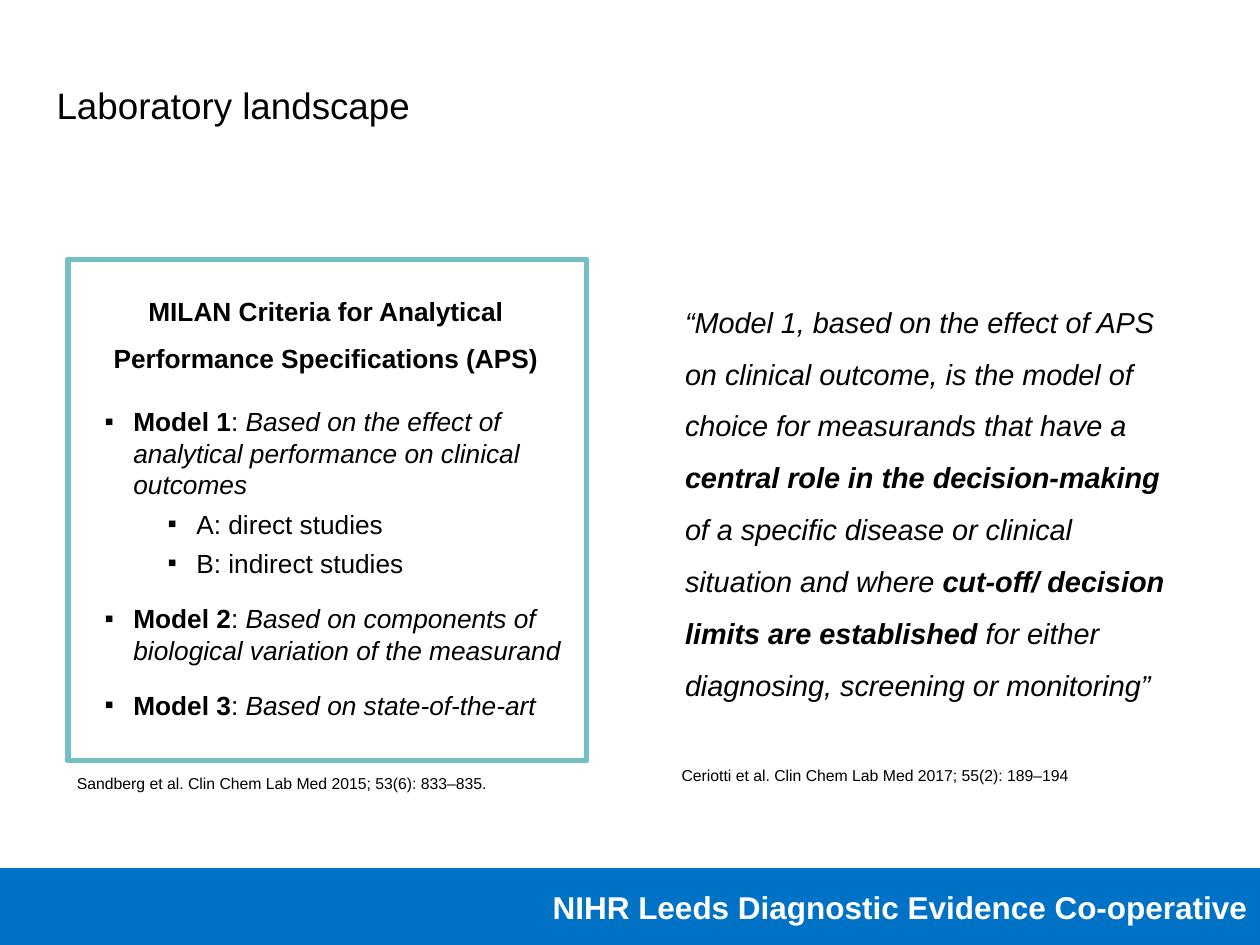
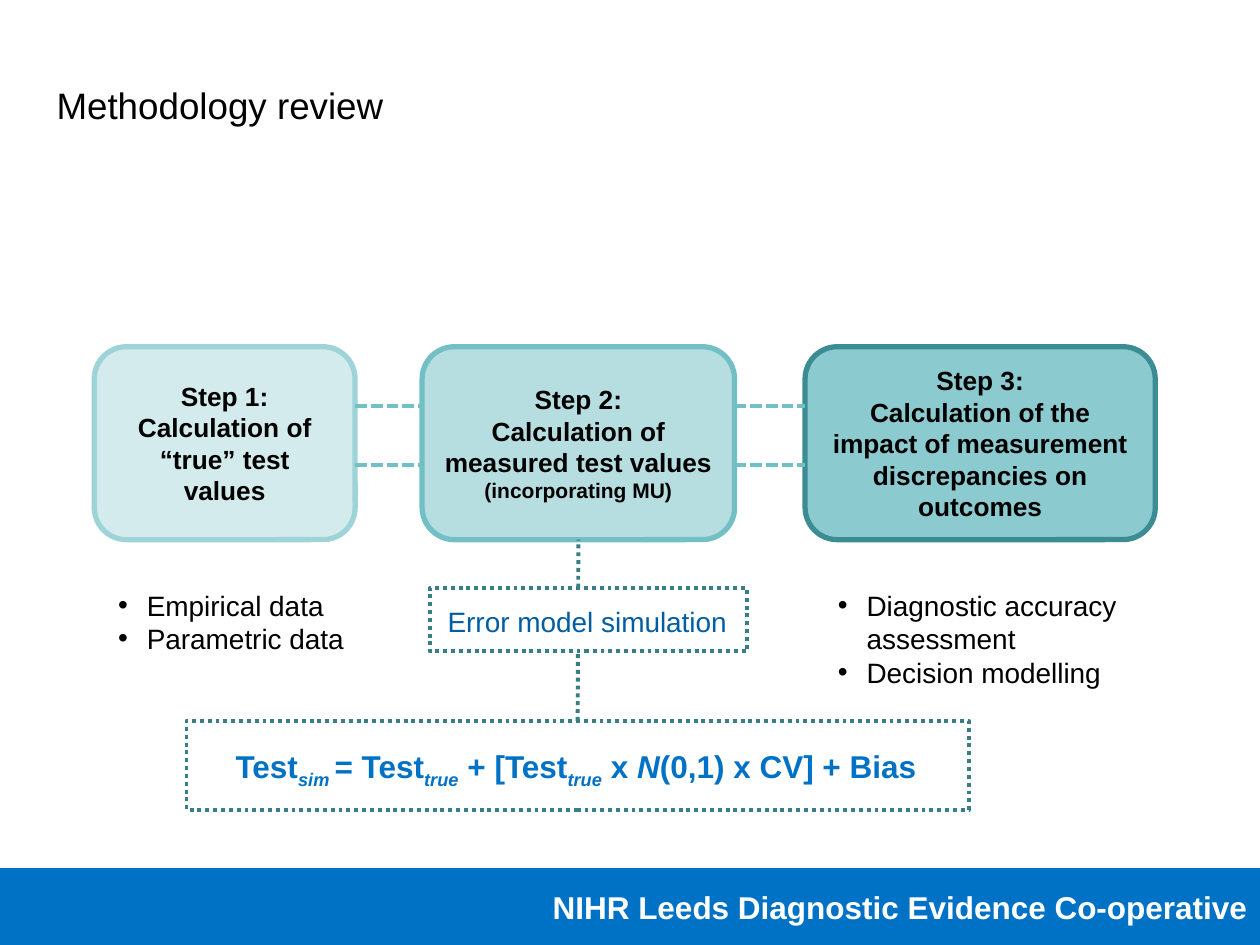
"""Build two slides on laboratory models and a methodology review."""
from lxml import etree
from pptx import Presentation
from pptx.dml.color import RGBColor
from pptx.enum.dml import MSO_LINE
from pptx.enum.shapes import MSO_CONNECTOR, MSO_SHAPE
from pptx.enum.text import MSO_ANCHOR, PP_ALIGN
from pptx.oxml.ns import qn
from pptx.util import Cm, Pt

RECT, ROUND = MSO_SHAPE.RECTANGLE, MSO_SHAPE.ROUNDED_RECTANGLE
DASH, DOT = MSO_LINE.SQUARE_DOT, MSO_LINE.ROUND_DOT
LINE = MSO_CONNECTOR.STRAIGHT
TOP, MID = MSO_ANCHOR.TOP, MSO_ANCHOR.MIDDLE
LEFT, CENTER, RIGHT = PP_ALIGN.LEFT, PP_ALIGN.CENTER, PP_ALIGN.RIGHT

FONT = "Arial"
COLORS = {
    "black": "000000", "white": "FFFFFF", "blue": "0072C6", "navy": "005DA2",
    "teal": "72BFC5", "dark": "377F85",
    "fill1": "D3EBED", "edge1": "9ED3D7",
    "fill2": "B6DDE0", "edge2": "72BFC5",
    "fill3": "8BCACF", "edge3": "3C8C93",
}

WIDE, TALL = 25.4, 19.05
BAND = (0, 17.53, WIDE, 1.5)
HEAD = (0.89, 1.3, 17.15, 1.63)
FOOT = "NIHR Leeds Diagnostic Evidence Co-operative"

MAIN = {"mark": "▪", "left": 1.27, "after": 13.5}
SUB = {"mark": "▪", "left": 2.54, "after": 4.5}
DOTS = {"mark": "•", "left": 0.58}

MILAN = [
    ([("MILAN Criteria for Analytical Performance Specifications (APS)", "b")],
     {"align": CENTER, "left": 0.36, "space": 1.5, "after": 18}),
    ([("Model 1", "b"), (": ", ""),
      ("Based on the effect of analytical performance on clinical outcomes", "i")],
     {**MAIN, "after": 4.5}),
    ([("A: direct studies", "")], SUB),
    ([("B: indirect studies", "")], {**SUB, "after": 13.5}),
    ([("Model 2", "b"), (": ", ""),
      ("Based on components of biological variation of the measurand", "i")], MAIN),
    ([("Model 3", "b"), (": ", ""), ("Based on state-of-the-art", "i")], MAIN),
]
QUOTE = [([
    ("“Model 1, based on the effect of APS on clinical outcome, is the model of "
     "choice for measurands that have a ", "i"),
    ("central role in the decision-making ", "bi"),
    ("of a specific disease or clinical situation and where ", "i"),
    ("cut-off/ decision limits are established ", "bi"),
    ("for either diagnosing, screening or monitoring”", "i"),
], {"space": 1.5})]
CITES = [
    ((1.3, 15.47, 8.99, 0.64), "Sandberg et al. Clin Chem Lab Med 2015; 53(6): 833–835."),
    ((13.49, 15.32, 8.99, 0.64), "Ceriotti et al. Clin Chem Lab Med 2017; 55(2): 189–194"),
]

STEP_TOP, STEP_TALL = 6.99, 3.89
STEPS = [
    (1.9, 5.26, ["Step 1:", "Calculation of “true” test values"], None),
    (8.51, 6.3, ["Step 2:", "Calculation of measured test values"], "(incorporating MU)"),
    (16.23, 7.06, ["Step 3:", "Calculation of the impact of measurement "
                   "discrepancies on outcomes"], None),
]
LINK_TOPS = (8.18, 9.37)
LISTS = [
    ((2.13, 11.73, 5.46, 1.63), ["Empirical data", "Parametric data"]),
    ((16.64, 11.73, 6.76, 3), ["Diagnostic accuracy assessment", "Decision modelling"]),
]
MODEL = [([
    ("Test", "b"), ("sim ", "bi_"), ("= Test", "b"), ("true", "bi_"),
    (" + [Test", "b"), ("true", "bi_"), (" x ", "b"), ("N", "bi"),
    ("(0,1) x CV] + Bias", "b"),
], {})]


def rgb(name):
    return RGBColor.from_string(COLORS[name])


def plain(text, style="", **form):
    return [([(text, style)], form)]


def write(shape, paras, size, color="black", anchor=TOP):
    frame = shape.text_frame
    frame.word_wrap = True
    frame.vertical_anchor = anchor
    for i, (runs, form) in enumerate(paras):
        para = frame.add_paragraph() if i else frame.paragraphs[0]
        props = para._p.get_or_add_pPr()
        if "left" in form:
            props.set("marL", str(Cm(form["left"])))
        if "mark" in form:
            props.set("indent", str(-Cm(0.58)))
            etree.SubElement(props, qn("a:buFont")).set("typeface", FONT)
            etree.SubElement(props, qn("a:buChar")).set("char", form["mark"])
        para.alignment = form.get("align", LEFT)
        para.line_spacing = form.get("space", 1.0)
        para.space_after = Pt(form.get("after", 0))
        for text, style in runs:
            run = para.add_run()
            run.text = text
            font = run.font
            font.name, font.size = FONT, Pt(form.get("size", size))
            font.bold, font.italic = "b" in style, "i" in style
            font.color.rgb = rgb(color)
            if "_" in style:
                run._r.get_or_add_rPr().set("baseline", "-25000")


def label(slide, box, paras, size, color="black", anchor=TOP):
    write(slide.shapes.add_textbox(*map(Cm, box)), paras, size, color, anchor)


def stroke(line, color, width, dash=None):
    line.color.rgb = rgb(color)
    line.width = Pt(width)
    if dash:
        line.dash_style = dash


def block(slide, box, fill, edge, width, kind=RECT, dash=None):
    shape = slide.shapes.add_shape(kind, *map(Cm, box))
    shape.shadow.inherit = False
    if fill:
        shape.fill.solid()
        shape.fill.fore_color.rgb = rgb(fill)
    else:
        shape.fill.background()
    stroke(shape.line, edge, width, dash)
    return shape


def link(slide, ends, color, dash):
    wire = slide.shapes.add_connector(LINE, *map(Cm, ends))
    etree.SubElement(wire._element.spPr, qn("a:effectLst"))
    stroke(wire.line, color, 2.25, dash)
    return wire


def start(deck, title):
    slide = deck.slides.add_slide(deck.slide_layouts[6])
    band = block(slide, BAND, "blue", "blue", 2)
    write(band, plain(FOOT, "b", align=RIGHT), 18, "white", MID)
    label(slide, HEAD, plain(title), 21, anchor=MID)
    return slide


def models(deck):
    slide = start(deck, "Laboratory landscape")
    label(slide, (1.17, 5.51, 10.44, 9.3), MILAN, 15)
    block(slide, (1.37, 5.23, 10.46, 10.11), None, "teal", 3)
    label(slide, (13.56, 5.66, 10.49, 8.71), QUOTE, 16.5)
    for box, text in CITES:
        label(slide, box, plain(text), 9)


def review(deck):
    slide = start(deck, "Methodology review")
    cards = []
    for num, (left, width, lines, note) in enumerate(STEPS, 1):
        card = block(slide, (left, STEP_TOP, width, STEP_TALL),
                     f"fill{num}", f"edge{num}", 3, ROUND)
        paras = [([(text, "b")], {"align": CENTER}) for text in lines]
        if note:
            paras += plain(note, "b", align=CENTER, size=12)
        write(card, paras, 15, anchor=MID)
        cards.append(card)
    for (left, width, *_), (end, *_) in zip(STEPS, STEPS[1:]):
        for top in LINK_TOPS:
            link(slide, (left + width, top, end, top), "teal", DASH)
    for box, items in LISTS:
        label(slide, box, [([(item, "")], DOTS) for item in items], 16)

    base = block(slide, (3.76, 14.53, 15.77, 1.8), "white", "dark", 2.25, dash=DOT)
    label(slide, (4.5, 14.94, 14.71, 1.02), MODEL, 18, "blue")
    stem = link(slide, (11.65, 14.53, 11.65, 10.88), "dark", DOT)
    stem.begin_connect(base, 0)
    stem.end_connect(cards[1], 2)
    block(slide, (8.66, 11.86, 6.4, 1.27), "white", "dark", 2.25, dash=DOT)
    label(slide, (8.64, 12.07, 6.4, 0.94),
          plain("Error model simulation", align=CENTER), 16, "navy")


def main():
    deck = Presentation()
    deck.slide_width, deck.slide_height = Cm(WIDE), Cm(TALL)
    models(deck)
    review(deck)
    deck.save("out.pptx")


if __name__ == "__main__":
    main()
